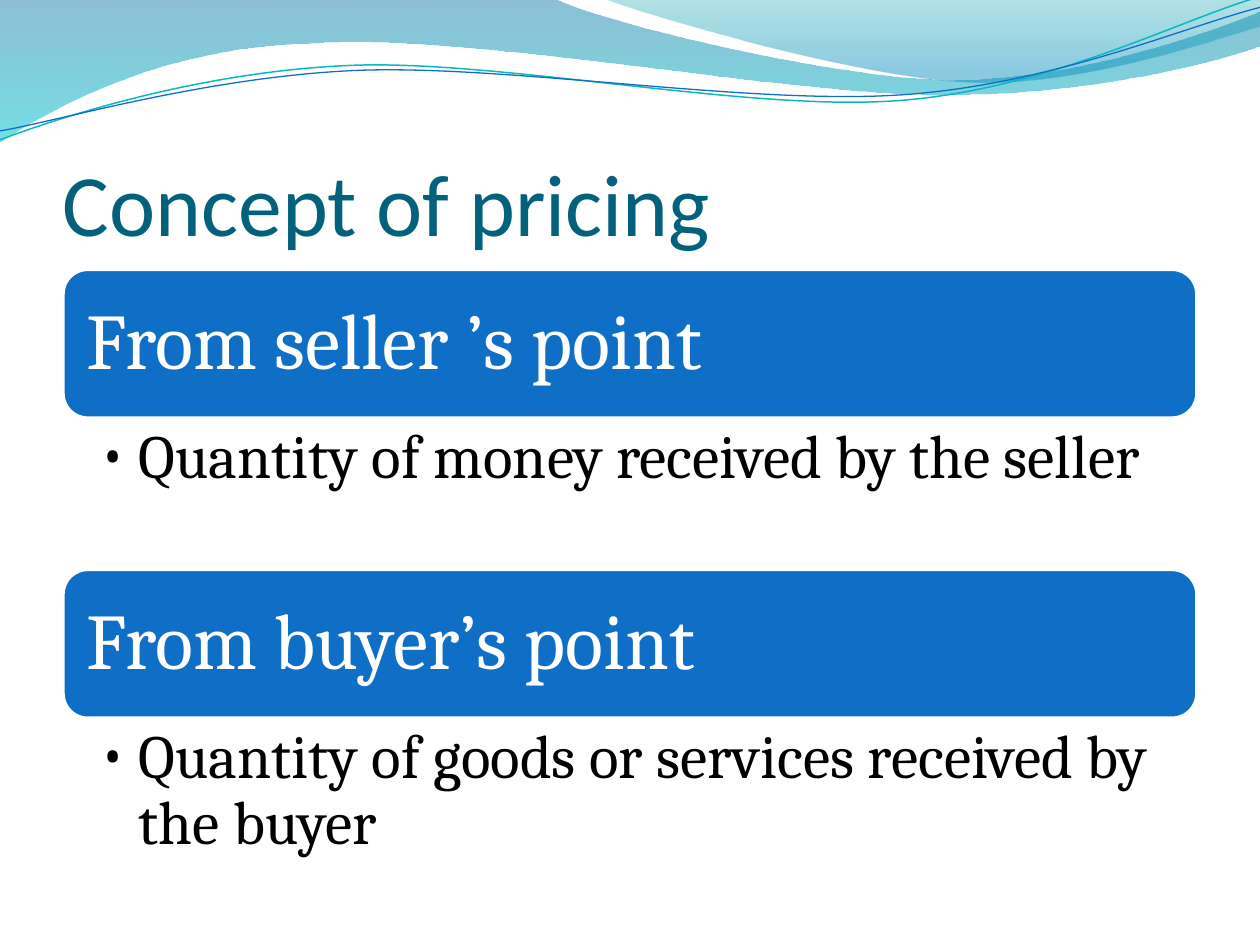
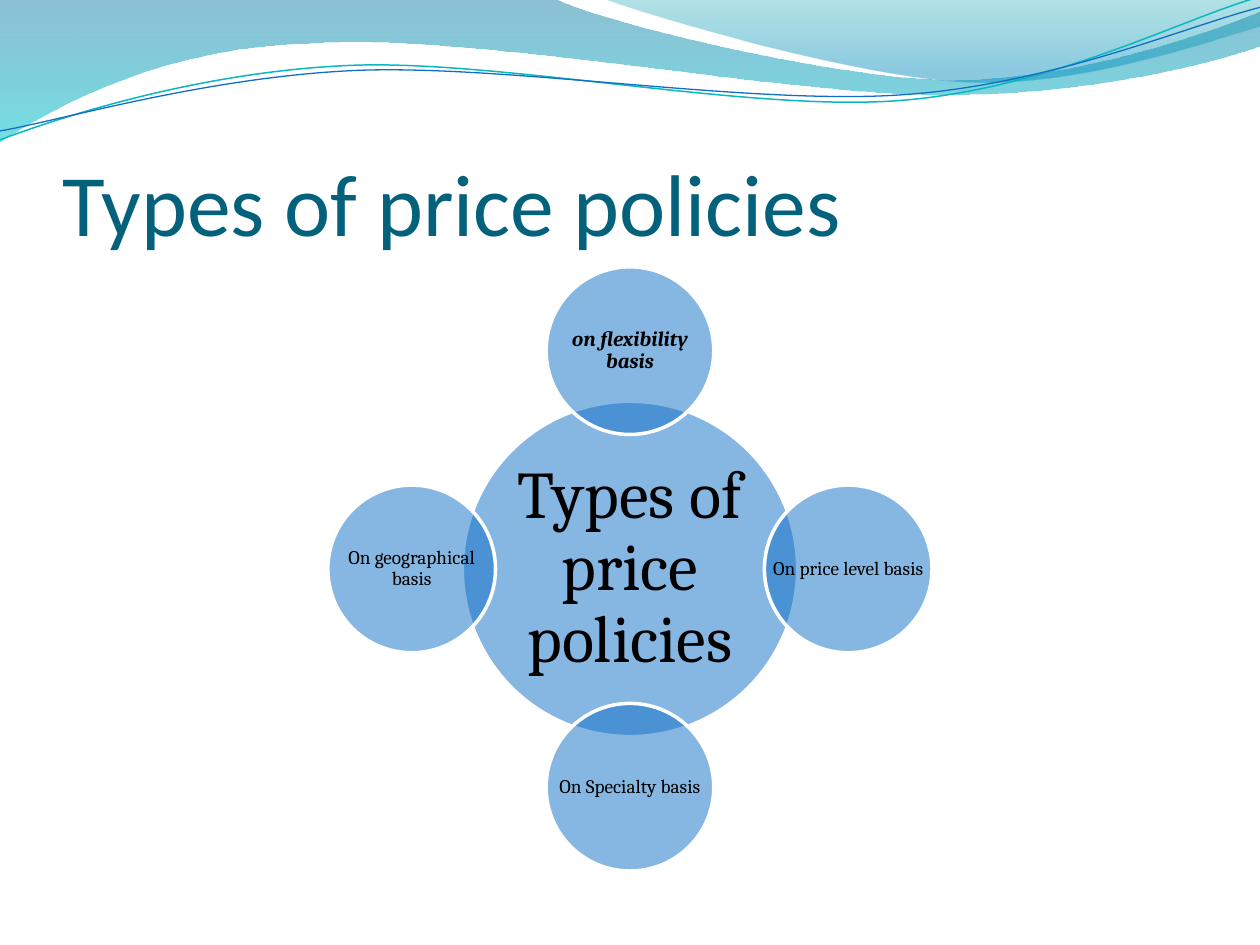
from math import cos, radians, sin

from lxml import etree
from pptx import Presentation
from pptx.dml.color import RGBColor
from pptx.enum.shapes import MSO_SHAPE
from pptx.enum.text import MSO_ANCHOR, PP_ALIGN
from pptx.oxml.ns import qn
from pptx.util import Cm, Pt

ROUND, OVAL = MSO_SHAPE.ROUNDED_RECTANGLE, MSO_SHAPE.OVAL
TOP, MID, LOW = MSO_ANCHOR.TOP, MSO_ANCHOR.MIDDLE, MSO_ANCHOR.BOTTOM
LEFT, CENTER = PP_ALIGN.LEFT, PP_ALIGN.CENTER

BLUE, TEAL, WHITE, BLACK = "0F6FC6", "04617B", "FFFFFF", "000000"
FONT = "Cambria"
WIDE, HIGH = 25.4, 19.05
EDGE, SPAN = 1.27, 22.86

POINTS = [
    ("From seller ’s point", "Quantity of money received by the seller"),
    ("From buyer’s point", "Quantity of goods or services received by the buyer"),
]
HUB = "Types of price policies"
BASES = [
    ("on flexibility basis", {"size": Pt(12), "bold": True, "italic": True}),
    ("On price level basis", {"size": Pt(11)}),
    ("On Specialty basis", {"size": Pt(11)}),
    ("On geographical basis", {"size": Pt(11)}),
]

WAVES = [
    {
        "start": (0, 0),
        "steps": [
            [(11.18, -0.03)],
            [(12.09, 0.43), (16.87, 1.6), (19.25, 1.6)],
            [(21.67, 1.6), (24.33, 0.66), (25.4, 0.23)],
            [(25.43, 0.91)],
            [(24.97, 1.12), (22.1, 1.93), (18.95, 1.91)],
            [(15.8, 1.91), (9.7, 0.71), (6.53, 0.86)],
            [(3.28, 0.91), (1.17, 2.11), (-0.03, 2.87)],
            [(0, 0)],
        ],
        "stops": [(0, "0074A1", 45), (1, "00C6CF", 55)],
    },
    {
        "start": (12.17, -0.03),
        "steps": [
            [(12.93, 0.28), (17.32, 1.57), (19.53, 1.65)],
            [(21.74, 1.75), (24.41, 0.81), (25.4, 0.53)],
            [(25.4, 0)],
            [(12.17, -0.03)],
        ],
        "stops": [(0, "00A1A9", 30), (0.8, "008BBF", 45)],
    },
    {
        "start": (0, 2.82),
        "steps": [
            [(1.22, 2.36), (4.01, 1.45), (7.04, 1.32)],
            [(10.03, 1.19), (15.06, 2.26), (18.11, 2.03)],
            [(21.16, 1.8), (23.83, 0.38), (25.35, -0.05)],
        ],
        "line": ("0AB8BF", 0.85),
    },
    {
        "start": (0, 2.64),
        "steps": [
            [(1.19, 2.44), (4.17, 1.55), (7.19, 1.42)],
            [(10.24, 1.3), (15.16, 2.13), (18.21, 1.91)],
            [(21.23, 1.7), (23.9, 0.53), (25.4, 0.15)],
        ],
        "line": (BLUE, 0.75),
    },
]


def paint(color, value):
    color.rgb = RGBColor.from_string(value)


def fade(color, value):
    etree.SubElement(color, qn("a:alpha")).set("val", str(value * 1000))


def assign(item, values):
    for name, value in values.items():
        setattr(item, name, value)


def bend(shape, steps):
    lines = iter(list(shape._element.iter(qn("a:lnTo"))))
    for step in steps:
        group = [next(lines) for _ in step]
        if len(group) == 1:
            continue
        curve = etree.Element(qn("a:cubicBezTo"))
        group[0].addprevious(curve)
        for line in group:
            curve.append(line[0])
            line.getparent().remove(line)


def draw_wave(slide, wave):
    steps = wave["steps"]
    pen = slide.shapes.build_freeform(*map(Cm, wave["start"]))
    dots = [(Cm(x), Cm(y)) for step in steps for x, y in step]
    pen.add_line_segments(dots, close="stops" in wave)
    shape = pen.convert_to_shape()
    bend(shape, steps)
    shape.shadow.inherit = False
    if "line" in wave:
        color, width = wave["line"]
        shape.fill.background()
        paint(shape.line.color, color)
        shape.line.width = Pt(width)
        return
    shape.fill.gradient()
    shape.fill.gradient_angle = 270
    for stop, (place, color, _) in zip(shape.fill.gradient_stops, wave["stops"]):
        stop.position = place
        paint(stop.color, color)
    for color, (_, _, alpha) in zip(shape._element.spPr.iter(qn("a:srgbClr")), wave["stops"]):
        fade(color, alpha)
    shape.line.fill.background()


def add_text(slide, box, text, font, color, pads, anchor=MID, para=None):
    frame = slide.shapes.add_textbox(*map(Cm, box)).text_frame
    sides = ("margin_left", "margin_top", "margin_right", "margin_bottom")
    assign(frame, dict(zip(sides, map(Cm, pads))))
    assign(frame, {"word_wrap": True, "vertical_anchor": anchor})
    line = frame.paragraphs[0]
    assign(line, para or {})
    run = line.add_run()
    run.text = text
    assign(run.font, {"name": FONT, **font})
    paint(run.font.color, color)
    return line


def add_block(slide, kind, box, alpha=None):
    shape = slide.shapes.add_shape(kind, *map(Cm, box))
    shape.shadow.inherit = False
    shape.fill.solid()
    paint(shape.fill.fore_color, BLUE)
    if alpha:
        fade(next(shape._element.spPr.iter(qn("a:srgbClr"))), alpha)
    paint(shape.line.color, WHITE)
    shape.line.width = Pt(2)


def add_bullet(line, indent):
    line.level = 1
    props = line._p.get_or_add_pPr()
    props.set("marL", str(Cm(indent)))
    props.set("indent", str(-Cm(indent)))
    etree.SubElement(props, qn("a:buFont")).set("typeface", FONT)
    etree.SubElement(props, qn("a:buChar")).set("char", "•")


def add_slide(deck, title):
    slide = deck.slides.add_slide(deck.slide_layouts[6])
    for wave in WAVES:
        draw_wave(slide, wave)
    add_text(slide, (EDGE, 1.95, SPAN, 3.17), title, {"name": "Calibri", "size": Pt(50)},
             TEAL, (0, 0.13, 0, 0), LOW)
    return slide


def add_points(slide):
    top, bar, body = 5.43, 3, 3.05
    para = {"line_spacing": 0.9, "alignment": LEFT}
    for i, (head, note) in enumerate(POINTS):
        y = top + i * (bar + body)
        box = (EDGE, y, SPAN, bar)
        add_block(slide, ROUND, box)
        add_text(slide, box, head, {"size": Pt(45)}, WHITE, [0.48] * 4, para=para)
        line = add_text(slide, (EDGE, y + bar, SPAN, body), note, {"size": Pt(35)}, BLACK,
                        (0.74, 0.15, 0.89, 0.15), TOP, para)
        add_bullet(line, 0.79)


def add_disc(slide, x, y, size, text, font, pad):
    box = (x - size / 2, y - size / 2, size, size)
    add_block(slide, OVAL, box, 50)
    add_text(slide, box, text, font, BLACK, [pad] * 4,
             para={"line_spacing": 0.9, "alignment": CENTER})


def add_wheel(slide):
    x, y, size, reach = WIDE / 2, 11.47, 6.76, 4.4
    add_disc(slide, x, y, size, HUB, {"size": Pt(38)}, 0.13)
    for i, (text, font) in enumerate(BASES):
        turn = radians(360 / len(BASES) * i - 90)
        add_disc(slide, x + reach * cos(turn), y + reach * sin(turn), size / 2, text, font, 0.05)


def main():
    deck = Presentation()
    assign(deck, {"slide_width": Cm(WIDE), "slide_height": Cm(HIGH)})
    add_points(add_slide(deck, "Concept of pricing"))
    add_wheel(add_slide(deck, HUB))
    deck.save("out.pptx")


if __name__ == "__main__":
    main()
